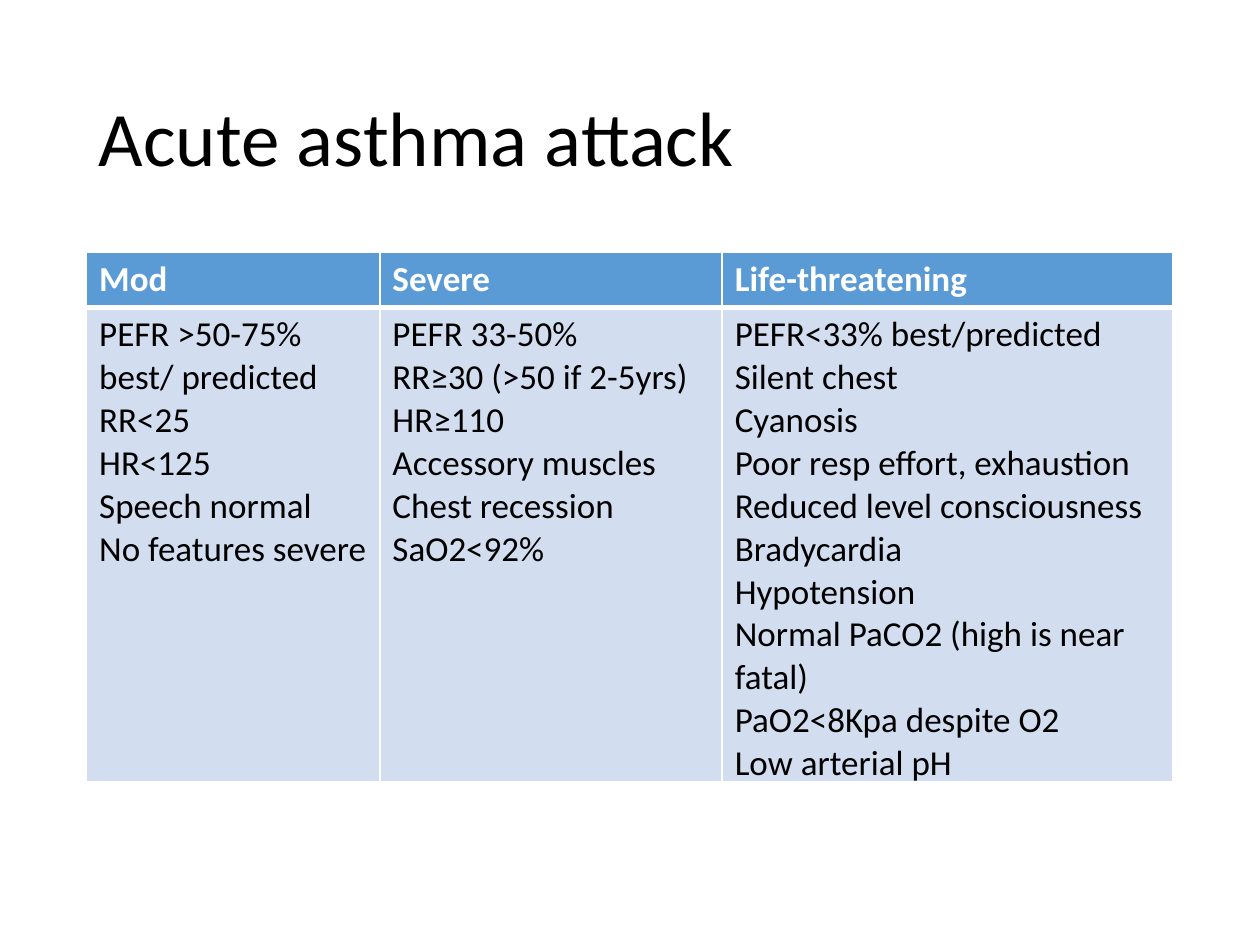
from dataclasses import dataclass

from lxml import etree
from pptx import Presentation
from pptx.dml.color import RGBColor
from pptx.enum import text
from pptx.oxml import ns
from pptx.util import Pt


@dataclass(frozen=True)
class Theme:
    font: str = "Calibri"
    title_size: int = 44
    table_size: int = 20
    ink: str = "000000"
    header_ink: str = "FFFFFF"
    header_fill: str = "5B9BD5"
    body_fill: str = "D2DEEF"
    border: str = "FFFFFF"


THEME = Theme()
LEFT = 49.5
COLUMN_WIDTHS = (167.6, 195.6, 257.6)
ROW_HEIGHTS = (31.6, 270.8)

SEVERITIES = {
    "Mod": [
        "PEFR >50-75% best/ predicted",
        "RR<25",
        "HR<125",
        "Speech normal",
        "No features severe",
    ],
    "Severe": [
        "PEFR 33-50%",
        "RR≥30 (>50 if 2-5yrs)",
        "HR≥110",
        "Accessory muscles",
        "Chest recession",
        "SaO2<92%",
    ],
    "Life-threatening": [
        "PEFR<33% best/predicted",
        "Silent chest",
        "Cyanosis",
        "Poor resp effort, exhaustion",
        "Reduced level consciousness",
        "Bradycardia",
        "Hypotension",
        "Normal PaCO2 (high is near fatal)",
        "PaO2<8Kpa despite O2",
        "Low arterial pH",
    ],
}


def write_lines(frame, lines, size, color, bold=False):
    for index, line in enumerate(lines):
        paragraph = frame.paragraphs[0] if index == 0 else frame.add_paragraph()
        run = paragraph.add_run()
        run.text = line
        run.font.name = THEME.font
        run.font.size = Pt(size)
        run.font.bold = bold
        run.font.color.rgb = RGBColor.from_string(color)


def add_title(slide, title):
    heading = slide.shapes.add_textbox(Pt(LEFT), Pt(28.8), Pt(621), Pt(104.4))
    frame = heading.text_frame
    frame.word_wrap = True
    frame.vertical_anchor = text.MSO_ANCHOR.MIDDLE
    write_lines(frame, [title], THEME.title_size, THEME.ink)
    frame.paragraphs[0].line_spacing = 0.9


def set_borders(cell, widths):
    properties = cell._tc.get_or_add_tcPr()
    for side, width in widths.items():
        line = etree.SubElement(properties, ns.qn(f"a:ln{side}"), w=str(Pt(width)))
        fill = etree.SubElement(line, ns.qn("a:solidFill"))
        etree.SubElement(fill, ns.qn("a:srgbClr"), val=THEME.border)


def fill_cell(cell, lines, fill, ink, bold, borders):
    set_borders(cell, borders)
    cell.fill.solid()
    cell.fill.fore_color.rgb = RGBColor.from_string(fill)
    write_lines(cell.text_frame, lines, THEME.table_size, ink, bold)


def add_severity_table(slide, severities):
    table = slide.shapes.add_table(
        len(ROW_HEIGHTS), len(severities), Pt(LEFT), Pt(144),
        Pt(sum(COLUMN_WIDTHS)), Pt(sum(ROW_HEIGHTS)),
    ).table
    for row, height in zip(table.rows, ROW_HEIGHTS):
        row.height = Pt(height)
    header_borders = {"L": 1, "R": 1, "T": 1, "B": 3}
    body_borders = {"L": 1, "R": 1, "T": 3, "B": 1}
    for column, (severity, signs) in enumerate(severities.items()):
        table.columns[column].width = Pt(COLUMN_WIDTHS[column])
        fill_cell(table.cell(0, column), [severity], THEME.header_fill,
                  THEME.header_ink, True, header_borders)
        fill_cell(table.cell(1, column), signs, THEME.body_fill,
                  THEME.ink, False, body_borders)


def main():
    deck = Presentation()
    deck.slide_width, deck.slide_height = Pt(720), Pt(540)
    slide = deck.slides.add_slide(deck.slide_layouts[6])
    add_title(slide, "Acute asthma attack")
    add_severity_table(slide, SEVERITIES)
    deck.save("out.pptx")


if __name__ == "__main__":
    main()
